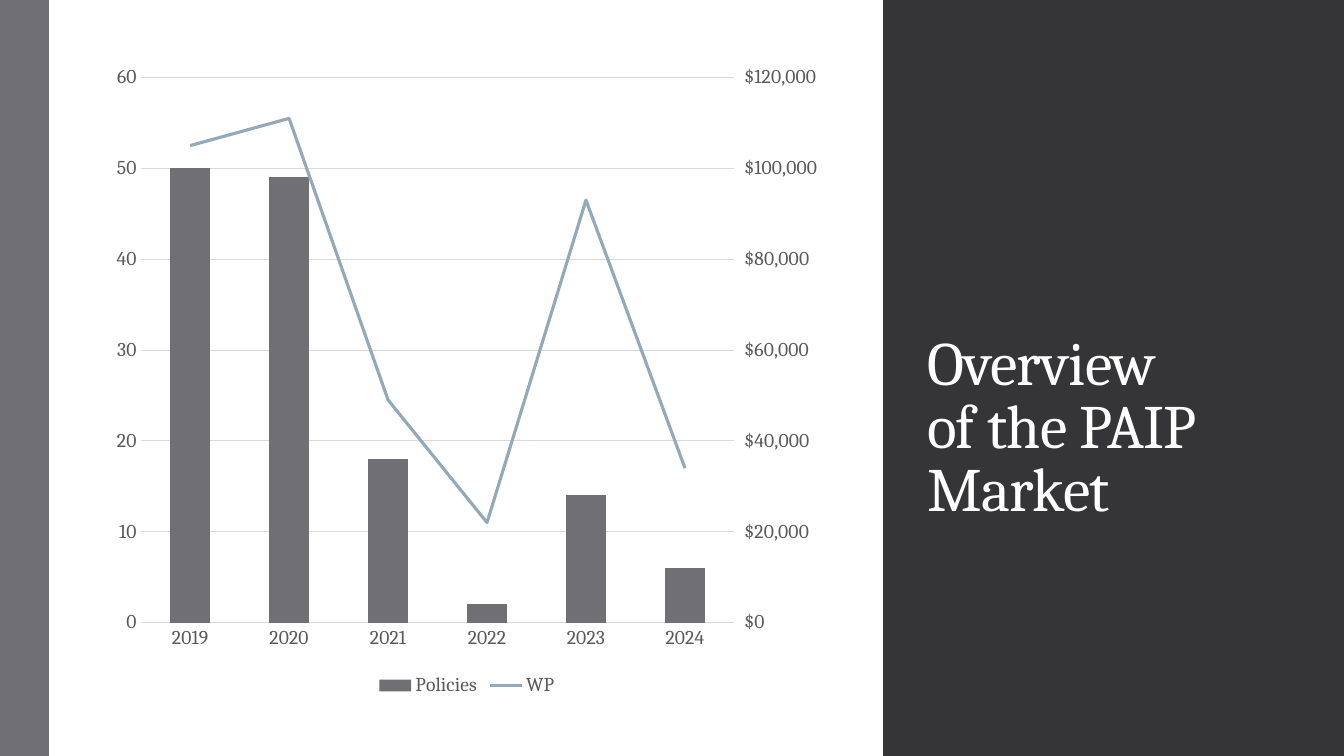
from copy import deepcopy

from lxml import etree
from pptx import Presentation
from pptx.chart.axis import CategoryAxis, ValueAxis
from pptx.chart.data import CategoryChartData
from pptx.dml.color import RGBColor
from pptx.enum.chart import XL_CHART_TYPE, XL_LEGEND_POSITION, XL_MARKER_STYLE, XL_TICK_MARK
from pptx.enum.shapes import MSO_SHAPE
from pptx.enum.text import MSO_ANCHOR, MSO_AUTO_SIZE, PP_ALIGN
from pptx.oxml.ns import qn
from pptx.util import Pt

TITLE = "Overview of the PAIP Market"
YEARS = ["2019", "2020", "2021", "2022", "2023", "2024"]
POLICIES = [50, 49, 18, 2, 14, 6]
WP = [105000, 111000, 49000, 22000, 93000, 34000]

FONT = "Cambria"
COLORS = {"gray": "6F6F74", "dark": "353537", "white": "FFFFFF",
          "text": "595959", "grid": "D9D9D9", "line": "92A9B9"}
PANELS = [
    ((0, 0, 50, 756), "gray"),
    ((50, 0, 1195, 756), "dark"),
    ((49, 0, 834, 756), "white"),
    ((1245, 0, 99, 756), "dark"),
]
TITLE_BOX = (917, 84, 308, 445)
CHART_BOX = (102, 53, 730, 648)

COLUMN = XL_CHART_TYPE.COLUMN_CLUSTERED
NO_TICK, OUT_TICK = XL_TICK_MARK.NONE, XL_TICK_MARK.OUTSIDE
LEGEND_BOTTOM = XL_LEGEND_POSITION.BOTTOM
NO_MARKER = XL_MARKER_STYLE.NONE
RECT = MSO_SHAPE.RECTANGLE
ANCHOR_BOTTOM = MSO_ANCHOR.BOTTOM
NO_AUTOFIT = MSO_AUTO_SIZE.NONE
LEFT = PP_ALIGN.LEFT


def px(n):
    return round(n * 914400 / 100.8)


def rgb(name):
    return RGBColor.from_string(COLORS[name])


def style_font(font, size, color):
    font.name = FONT
    font.size = Pt(size)
    font.color.rgb = rgb(color)


def style_line(line, color, width):
    line.color.rgb = rgb(color)
    line.width = Pt(width)


def add_panel(s, box, color):
    sp = s.shapes.add_shape(RECT, *map(px, box))
    sp.shadow.inherit = False
    sp.fill.solid()
    sp.fill.fore_color.rgb = rgb(color)
    sp.line.fill.background()


def add_title(s):
    sp = s.shapes.title
    sp.left, sp.top, sp.width, sp.height = map(px, TITLE_BOX)
    sp._element.getparent().append(sp._element)
    tf = sp.text_frame
    tf.word_wrap = True
    tf.auto_size = NO_AUTOFIT
    tf.vertical_anchor = ANCHOR_BOTTOM
    p = tf.paragraphs[0]
    p.alignment = LEFT
    p.line_spacing = 0.85
    r = p.add_run()
    r.text = TITLE
    style_font(r.font, 44, "white")
    r._r.get_or_add_rPr().set("spc", "-50")


def style_scale(axis, top, step, number_format, tick):
    axis.minimum_scale = 0
    axis.maximum_scale = top
    axis.major_unit = step
    axis.major_tick_mark = tick
    axis.tick_labels.number_format = number_format
    axis.tick_labels.number_format_is_linked = False


def move_to_line(chart):
    bar = chart.plots[0]._element
    ser = bar.findall(qn("c:ser"))[1]
    for invert in ser.findall(qn("c:invertIfNegative")):
        ser.remove(invert)
    line = etree.SubElement(bar.getparent(), qn("c:lineChart"))
    bar.addnext(line)
    etree.SubElement(line, qn("c:grouping"), val="standard")
    etree.SubElement(line, qn("c:varyColors"), val="0")
    line.append(ser)
    etree.SubElement(line, qn("c:marker"), val="1")
    for ax_id in ("5001", "5002"):
        etree.SubElement(line, qn("c:axId"), val=ax_id)


def add_right_axis(chart):
    value = chart.value_axis._element
    category = chart.category_axis._element
    right, hidden = deepcopy(value), deepcopy(category)
    value.addnext(right)
    right.addnext(hidden)
    for ax, own, other in ((hidden, "5001", "5002"), (right, "5002", "5001")):
        ax.find(qn("c:axId")).set("val", own)
        ax.find(qn("c:crossAx")).set("val", other)
    right.find(qn("c:axPos")).set("val", "r")
    right.find(qn("c:crosses")).set("val", "max")
    CategoryAxis(hidden).visible = False
    axis = ValueAxis(right)
    axis.has_major_gridlines = False
    style_scale(axis, 120000, 20000, '"$"#,##0', OUT_TICK)


def add_combo_chart(s):
    data = CategoryChartData()
    data.categories = YEARS
    data.add_series("Policies", POLICIES)
    data.add_series("WP", WP)
    chart = s.shapes.add_chart(COLUMN, *map(px, CHART_BOX), data).chart
    chart.has_title = False
    chart.font.name = FONT
    chart.font.size = Pt(10)
    chart.has_legend = True
    chart.legend.position = LEGEND_BOTTOM
    chart.legend.include_in_layout = False
    style_font(chart.legend.font, 14, "text")

    cat, val = chart.category_axis, chart.value_axis
    for axis in (cat, val):
        style_font(axis.tick_labels.font, 14, "text")
    cat.major_tick_mark = NO_TICK
    style_line(cat.format.line, "grid", 0.75)
    val.format.line.fill.background()
    val.has_major_gridlines = True
    style_line(val.major_gridlines.format.line, "grid", 0.75)
    style_scale(val, 60, 10, "General", NO_TICK)

    move_to_line(chart)
    add_right_axis(chart)

    columns, lines = chart.plots
    columns.gap_width = 150
    columns.vary_by_categories = False
    fill = columns.series[0].format.fill
    fill.solid()
    fill.fore_color.rgb = rgb("gray")
    wp = lines.series[0]
    wp.smooth = False
    wp.marker.style = NO_MARKER
    style_line(wp.format.line, "line", 2.25)


def main():
    prs = Presentation()
    prs.slide_width, prs.slide_height = px(1344), px(756)
    s = prs.slides.add_slide(prs.slide_layouts[5])
    for box, color in PANELS:
        add_panel(s, box, color)
    add_title(s)
    add_combo_chart(s)
    prs.save("out.pptx")


if __name__ == "__main__":
    main()
